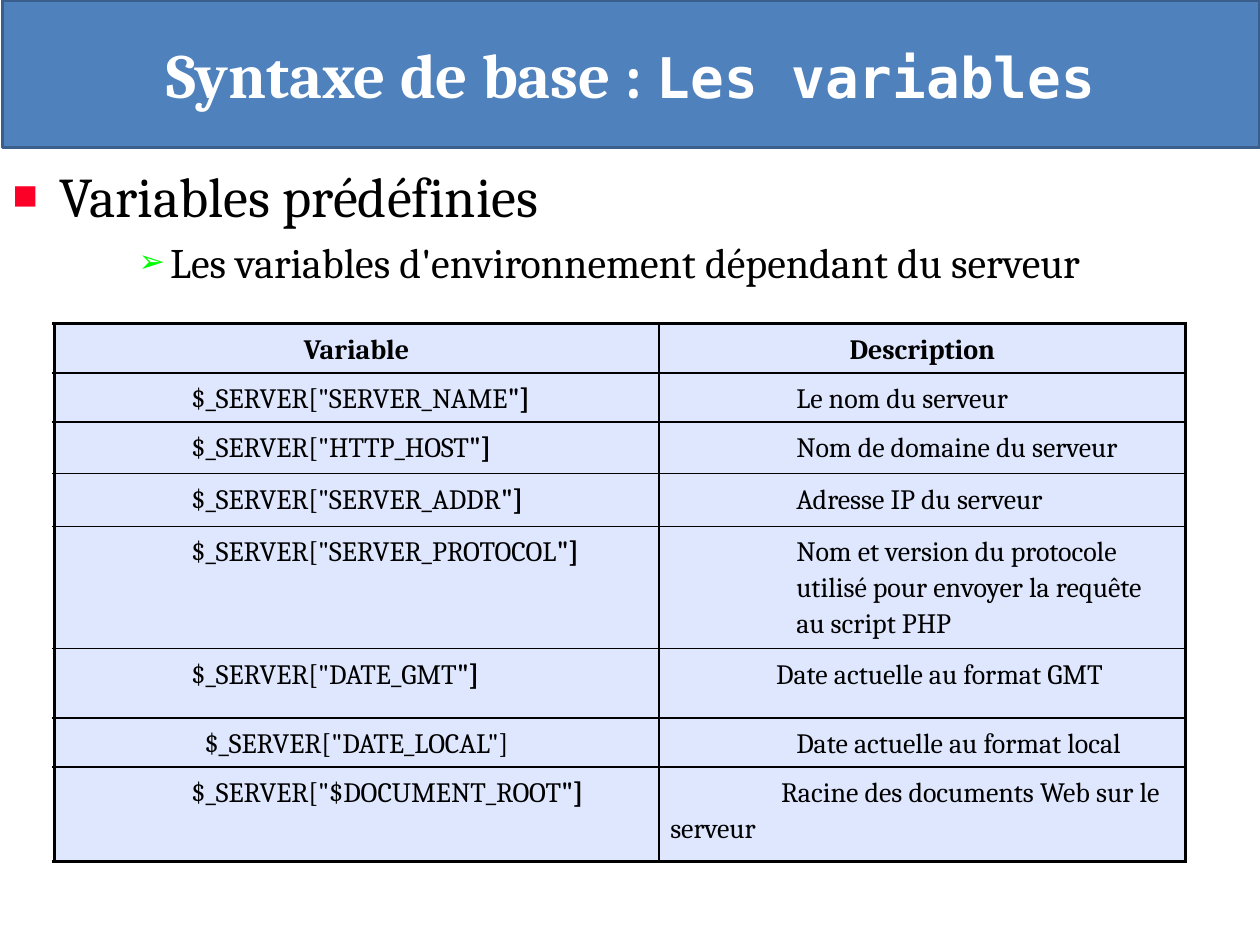
from pptx import Presentation
from pptx import util as u
from pptx.dml.color import RGBColor
from pptx.enum import text
from pptx.oxml.ns import qn
from lxml import etree

SERIF = "Cambria"
MONO = "DejaVu Sans Mono"
THIN, THICK = 0.91, 2.15
COLUMN_WIDTHS = [4.8, 4.18]
ROW_HEIGHTS = [0.39, 0.39, 0.41, 0.42, 0.97, 0.55, 0.39, 0.75]

# Each cell: runs as (text, bold), then left margin and first-line indent in
# inches, or None for a centred cell.
HANGING = (1, 0)
VARIABLES = [
    ("SERVER_NAME", "Le nom du serveur", HANGING),
    ("HTTP_HOST", "Nom de domaine du serveur", HANGING),
    ("SERVER_ADDR", "Adresse IP du serveur", HANGING),
    ("SERVER_PROTOCOL", "Nom et version du protocole utilisé pour envoyer "
                        "la requête au script PHP", HANGING),
    ("DATE_GMT", "Date actuelle au format GMT", (0, 0.84)),
    ("DATE_LOCAL", "Date actuelle au format local", HANGING),
    ("$DOCUMENT_ROOT", "Racine des documents Web sur le serveur", (0, 0.88)),
]


def rgb(color):
    return RGBColor.from_string(color)


def place(shape, box):
    shape.left, shape.top, shape.width, shape.height = map(u.Inches, box)


def add_run(paragraph, content, size, color="000000", bold=False, font=SERIF):
    run = paragraph.add_run()
    run.text = content
    run.font.size = u.Pt(size)
    run.font.name = font
    run.font.bold = bold
    run.font.color.rgb = rgb(color)


def set_indent(paragraph, margin, first_line):
    properties = paragraph._p.get_or_add_pPr()
    properties.set("marL", str(u.Inches(margin)))
    properties.set("indent", str(u.Inches(first_line)))


def set_bullet(paragraph, character, color):
    properties = paragraph._p.get_or_add_pPr()
    bullet_color = etree.SubElement(properties, qn("a:buClr"))
    etree.SubElement(bullet_color, qn("a:srgbClr"), val=color)
    etree.SubElement(properties, qn("a:buSzPct"), val="75000")
    etree.SubElement(properties, qn("a:buChar"), char=character)


def set_borders(cell, widths):
    """Draw black borders; widths are points for left, right, top, bottom."""
    properties = cell._tc.get_or_add_tcPr()
    for side, width in zip("LRTB", widths):
        line = etree.SubElement(properties, qn(f"a:ln{side}"), w=str(u.Pt(width)))
        fill = etree.SubElement(line, qn("a:solidFill"))
        etree.SubElement(fill, qn("a:srgbClr"), val="000000")


def fill_title(title, box):
    place(title, box)
    title.fill.solid()
    title.fill.fore_color.rgb = rgb("4F81BD")
    title.line.color.rgb = rgb("3A5F8C")
    title.line.width = u.Pt(2)
    frame = title.text_frame
    frame.auto_size = text.MSO_AUTO_SIZE.NONE
    frame.vertical_anchor = text.MSO_ANCHOR.MIDDLE
    paragraph = frame.paragraphs[0]
    paragraph.alignment = text.PP_ALIGN.CENTER
    add_run(paragraph, "Syntaxe de base : ", 36, "FFFFFF", True)
    add_run(paragraph, "Les variables", 32, "FFFFFF", True, MONO)


def fill_body(body, box):
    place(body, box)
    frame = body.text_frame
    frame.auto_size = text.MSO_AUTO_SIZE.NONE
    heading = frame.paragraphs[0]
    set_indent(heading, 0.37, -0.37)
    set_bullet(heading, "■", "FC0128")
    add_run(heading, "Variables prédéfinies", 32)
    detail = frame.add_paragraph()
    detail.level = 2
    set_indent(detail, 1.25, -0.25)
    set_bullet(detail, "➢", "00FF00")
    add_run(detail, "Les variables d'environnement dépendant du serveur", 24)


def table_rows():
    yield [([("Variable", True)], None), ([("Description", True)], None)]
    for name, description, indent in VARIABLES:
        if name == "DATE_LOCAL":
            variable = ([(f'$_SERVER["{name}"]', False)], None)
        else:
            variable = ([(f'$_SERVER["{name}', False), ('"]', True)], HANGING)
        yield [variable, ([(description, False)], indent)]


def fill_cell(cell, runs, indent):
    cell.margin_left = cell.margin_right = u.Inches(0.09)
    cell.margin_top = cell.margin_bottom = u.Inches(0.05)
    cell.fill.solid()
    cell.fill.fore_color.rgb = rgb("DEE7FE")
    paragraph = cell.text_frame.paragraphs[0]
    paragraph.line_spacing = 1.12
    paragraph.space_before = u.Pt(4)
    if indent is None:
        paragraph.alignment = text.PP_ALIGN.CENTER
    else:
        set_indent(paragraph, *indent)
    for content, bold in runs:
        add_run(paragraph, content, 16, bold=bold)


def add_variable_table(slide, left, top):
    rows, columns = len(ROW_HEIGHTS), len(COLUMN_WIDTHS)
    table = slide.shapes.add_table(
        rows, columns, u.Inches(left), u.Inches(top),
        u.Inches(sum(COLUMN_WIDTHS)), u.Inches(sum(ROW_HEIGHTS))).table
    table.first_row = table.horz_banding = False
    for column, width in zip(table.columns, COLUMN_WIDTHS):
        column.width = u.Inches(width)
    for row, height in zip(table.rows, ROW_HEIGHTS):
        row.height = u.Inches(height)
    for r, cells in enumerate(table_rows()):
        for c, (runs, indent) in enumerate(cells):
            cell = table.cell(r, c)
            outer = (c == 0, c == columns - 1, r == 0, r == rows - 1)
            set_borders(cell, [THICK if edge else THIN for edge in outer])
            fill_cell(cell, runs, indent)


def main():
    presentation = Presentation()
    presentation.slide_width = u.Inches(10)
    presentation.slide_height = u.Inches(7.5)
    slide = presentation.slides.add_slide(presentation.slide_layouts[1])
    fill_title(slide.shapes.title, (0.02, 0, 9.98, 1.17))
    fill_body(slide.placeholders[1], (0, 1.23, 10, 5.25))
    add_variable_table(slide, 0.43, 2.57)
    presentation.save("out.pptx")


if __name__ == "__main__":
    main()
